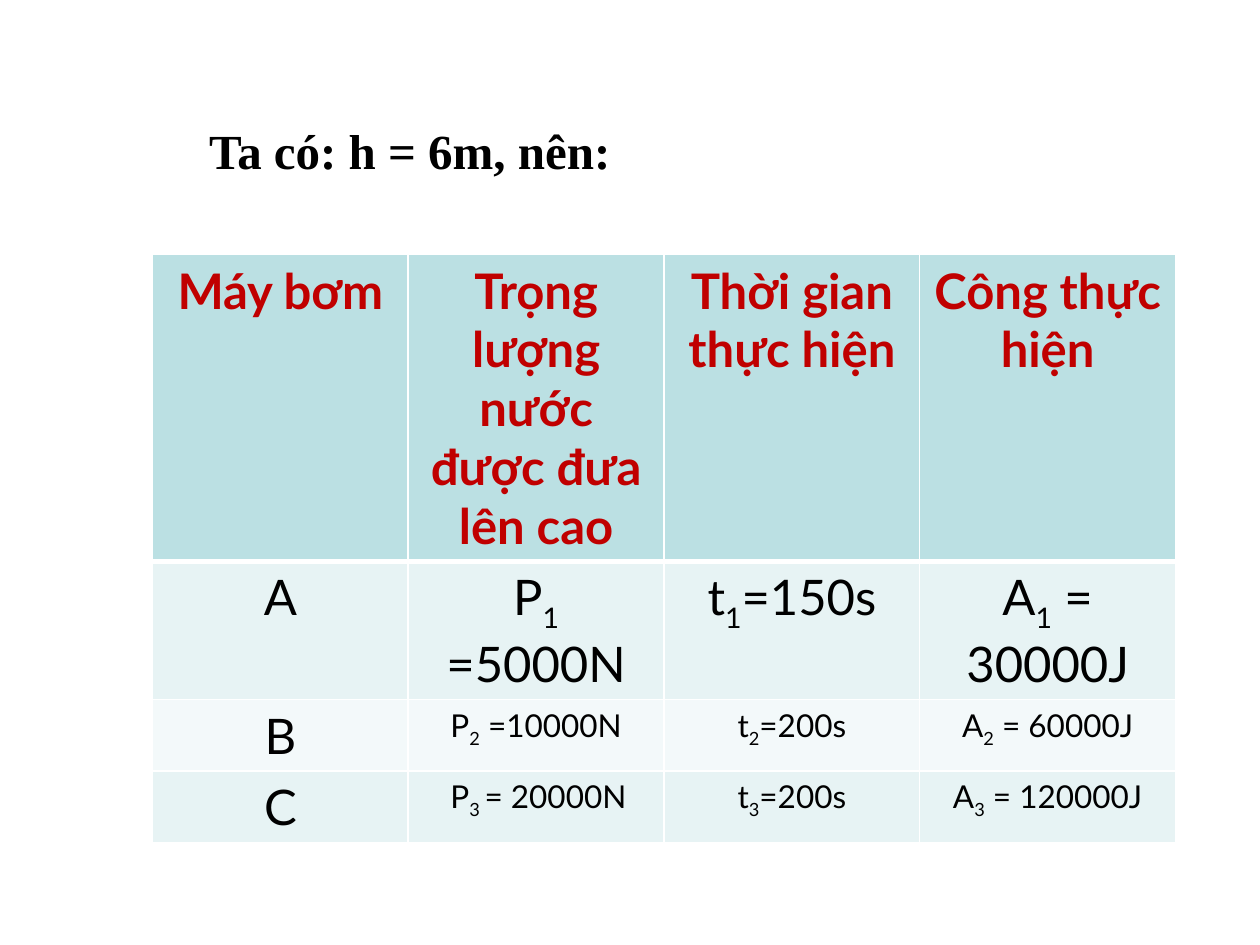
from lxml import etree
from pptx import Presentation, util as u
from pptx.dml.color import RGBColor
from pptx.enum import text
from pptx.oxml import ns

BLACK = RGBColor(0, 0, 0)
RED = RGBColor(0xC0, 0, 0)
HEAD_FILL = RGBColor(0xBB, 0xE0, 0xE3)
BAND_FILLS = [RGBColor(0xF3, 0xF9, 0xFA), RGBColor(0xE7, 0xF3, 0xF4)]

# Odd pieces between underscores are subscripts
ROWS = [
    ["Máy bơm", "Trọng lượng nước được đưa lên cao", "Thời gian thực hiện", "Công thực hiện"],
    ["A", "P_1_ =5000N", "t_1_=150s", "A_1_ = 30000J"],
    ["B", "P_2_ =10000N", "t_2_=200s", "A_2_ = 60000J"],
    ["C", "_ _P_3 _= 20000N", "t_3_=200s", "A_3_ = 120000J"],
]
COL_W = u.Inches(2.03)
ROW_HEIGHTS = [1.17, 0.49, 0.49, 0.49]


def add_run(p, words, **font):
    r = p.add_run()
    r.text = words
    color = font.pop("color")
    for name, value in font.items():
        setattr(r.font, name, value)
    r.font.color.rgb = color
    return r


def add_border(cell, side, points):
    tcPr = cell._tc.get_or_add_tcPr()
    ln = etree.SubElement(tcPr, ns.qn("a:ln" + side), w=str(u.Pt(points)))
    fill = etree.SubElement(ln, ns.qn("a:solidFill"))
    etree.SubElement(fill, ns.qn("a:srgbClr"), val="FFFFFF")


prs = Presentation()
prs.slide_width, prs.slide_height = u.Inches(10), u.Inches(7.5)
s = prs.slides.add_slide(prs.slide_layouts[5])

# Title
sp = s.shapes.title
box = dict(left=1.56, top=0.91, width=3.45, height=0.57)
for name, value in box.items():
    setattr(sp, name, u.Inches(value))
tf = sp.text_frame
frame = dict(word_wrap=True, vertical_anchor=text.MSO_ANCHOR.TOP,
             auto_size=text.MSO_AUTO_SIZE.SHAPE_TO_FIT_TEXT)
for name, value in frame.items():
    setattr(tf, name, value)
p = tf.paragraphs[0]
p.alignment = text.PP_ALIGN.LEFT
add_run(p, "Ta có: h = 6m, nên:", name="Times New Roman", size=u.Pt(28), bold=True, color=BLACK)

# Table of pumps
table = s.shapes.add_table(len(ROWS), len(ROWS[0]), u.Inches(1.21), u.Inches(2.02),
                           COL_W * len(ROWS[0]), u.Inches(sum(ROW_HEIGHTS))).table
for col in table.columns:
    col.width = COL_W
for row, height in zip(table.rows, ROW_HEIGHTS):
    row.height = u.Inches(height)

for i, row in enumerate(ROWS):
    for j, words in enumerate(row):
        cell = table.cell(i, j)
        # Thick rule between the header and the first pump
        for side in "LRTB":
            add_border(cell, side, 3 if (i, side) in [(0, "B"), (1, "T")] else 1)
        cell.fill.solid()
        cell.fill.fore_color.rgb = BAND_FILLS[i % 2] if i else HEAD_FILL
        p = cell.text_frame.paragraphs[0]
        p.alignment = text.PP_ALIGN.CENTER
        size = 18 if i > 1 and j > 0 else 28
        for k, piece in enumerate(words.split("_")):
            if piece:
                r = add_run(p, piece, name="Lato", size=u.Pt(size), bold=i == 0,
                            color=BLACK if i else RED)
                if k % 2:
                    r._r.get_or_add_rPr().set("baseline", "-25000")

prs.save("out.pptx")
